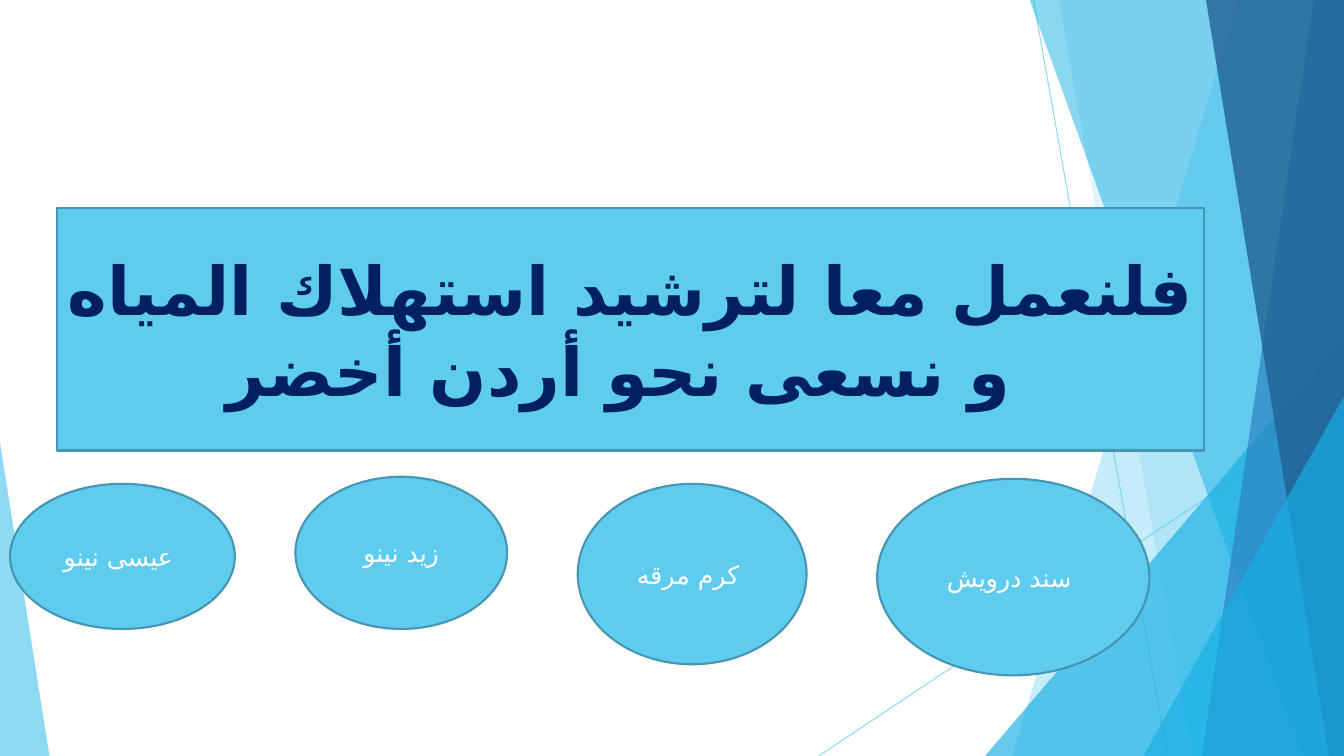
import pptx
import pptx.util
import pptx.dml.color
import pptx.enum.shapes
import pptx.enum.text
from lxml import etree
from pptx.util import Inches
from pptx.oxml.ns import qn

SHAPE = pptx.enum.shapes.MSO_SHAPE
SKY, CYAN, BLUE, NAVY = "5FCBEF", "17B0E4", "2E83C3", "226292"
FONT, ARABIC_FONT = "Roboto", "DejaVu Sans"
TOP, RIGHT, BOTTOM = -0.01, 13.33, 7.5


def color(hex_code):
    return pptx.dml.color.RGBColor.from_string(hex_code)


def set_opacity(s, percent):
    rgb = s._element.spPr.find(".//" + qn("a:srgbClr"))
    etree.SubElement(rgb, qn("a:alpha")).set("val", str(percent * 1000))


prs = pptx.Presentation()
prs.slide_width, prs.slide_height = Inches(RIGHT), Inches(BOTTOM)
shapes = prs.slides.add_slide(prs.slide_layouts[6]).shapes

# Thin crossing lines
for x1, y1, x2, y2 in [(10.25, 0, 11.58, BOTTOM), (RIGHT, 4.03, 8.12, BOTTOM)]:
    s = shapes.add_connector(pptx.enum.shapes.MSO_CONNECTOR.STRAIGHT,
                             Inches(x1), Inches(y1), Inches(x2), Inches(y2))
    s.line.color.rgb = color(SKY)
    s.line.width = pptx.util.Pt(0.75)
    set_opacity(s, 70)
    etree.SubElement(s._element.spPr, qn("a:effectLst"))

# Translucent facets, back to front:
# bands give the top and bottom x of their left edge,
# triangles give left, top, width and apex position
facets = [
    ("band", (12.28, 10.04), SKY, 36),
    ("band", (10.5, 11.83), SKY, 20),
    ("triangle", (9.77, 3.33, 3.56, 1), CYAN, 66),
    ("band", (10.21, 12.91), CYAN, 50),
    ("band", (13.03, 11.92), BLUE, 70),
    ("band", (11.96, 13.18), NAVY, 80),
    ("triangle", (11.34, 3.93, 1.99, 1), CYAN, 66),
    ("triangle", (0, 4.39, 0.49, 0), SKY, 70),
]
for kind, geometry, fill, opacity in facets:
    if kind == "band":
        top_x, bottom_x = geometry
        corners = [(RIGHT, TOP), (RIGHT, BOTTOM), (bottom_x, BOTTOM)]
        outline = shapes.build_freeform(Inches(top_x), Inches(TOP))
        outline.add_line_segments(
            [(Inches(x), Inches(y)) for x, y in corners], close=True)
        s = outline.convert_to_shape()
    else:
        left, top, width, apex = geometry
        s = shapes.add_shape(SHAPE.ISOSCELES_TRIANGLE, Inches(left), Inches(top),
                             Inches(width), Inches(BOTTOM - top))
        s.adjustments[0] = apex
    s.shadow.inherit = False
    s.fill.solid()
    s.fill.fore_color.rgb = color(fill)
    s.line.fill.background()
    set_opacity(s, opacity)

# Slogan panel and name ovals
NAME_STYLE = (18, False, "FFFFFF")
labels = [
    (SHAPE.RECTANGLE, (0.57, 2.06, 11.37, 2.41),
     "فلنعمل معا لترشيد استهلاك المياه و نسعى نحو أردن أخضر ", (48, True, "002060")),
    (SHAPE.OVAL, (0.1, 4.8, 2.23, 1.44), "عيسى نينو ", NAME_STYLE),
    (SHAPE.OVAL, (2.93, 4.73, 2.1, 1.51), "زيد نينو", NAME_STYLE),
    (SHAPE.OVAL, (5.73, 4.8, 2.27, 1.79), "كرم مرقه ", NAME_STYLE),
    (SHAPE.OVAL, (8.7, 4.75, 2.7, 1.95), "سند درويش ", NAME_STYLE),
]
for preset, box, text, (size, bold, text_color) in labels:
    s = shapes.add_shape(preset, *map(Inches, box))
    s.shadow.inherit = False
    s.fill.solid()
    s.fill.fore_color.rgb = color(SKY)
    s.line.color.rgb = color("4696B1")
    s.line.width = pptx.util.Pt(1.5)
    tf = s.text_frame
    tf.word_wrap = True
    tf.vertical_anchor = pptx.enum.text.MSO_ANCHOR.MIDDLE
    tf.text = text
    p = tf.paragraphs[0]
    p.alignment = pptx.enum.text.PP_ALIGN.CENTER
    r = p.runs[0]
    r.font.size = pptx.util.Pt(size)
    r.font.bold = bold
    r.font.color.rgb = color(text_color)
    r.font.name = FONT
    # Arabic letters take the complex-script font
    etree.SubElement(r.font._element, qn("a:cs")).set("typeface", ARABIC_FONT)

prs.save("out.pptx")
